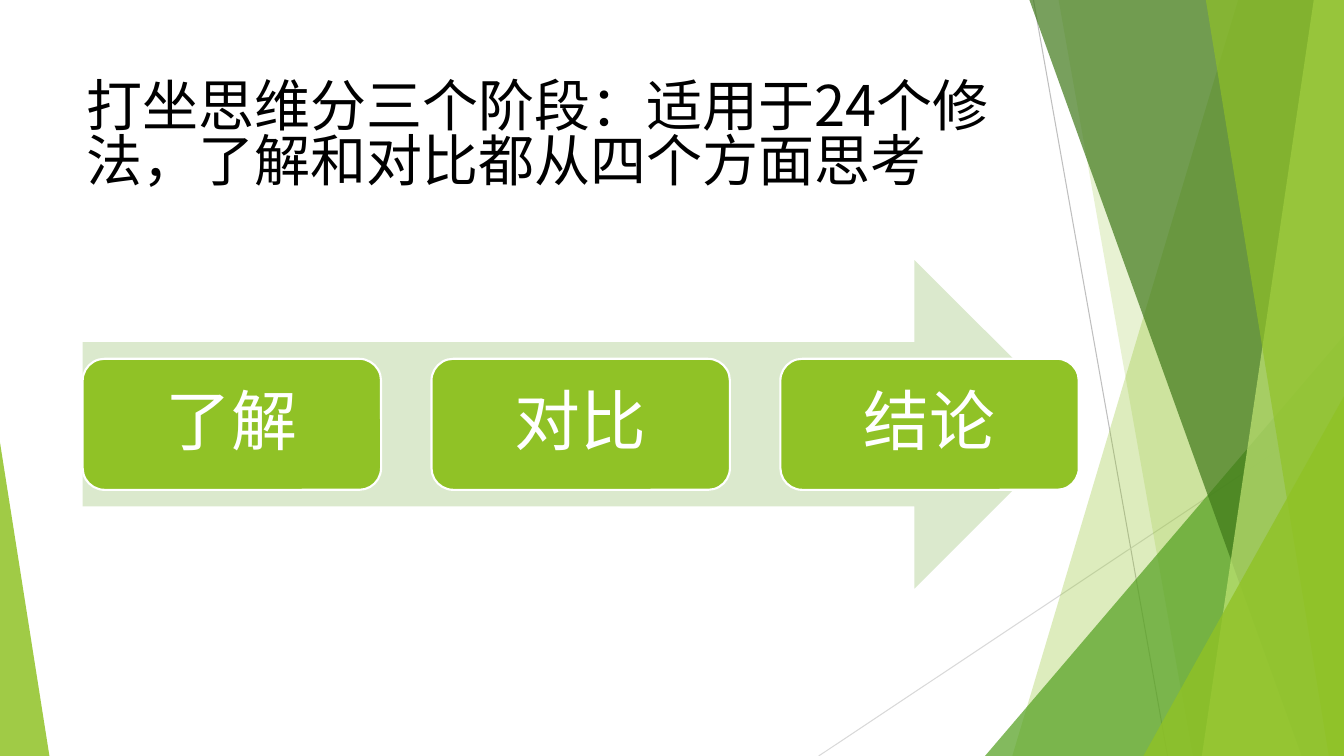
from lxml.etree import SubElement
from pptx import Presentation
from pptx.dml.color import RGBColor
from pptx.enum.shapes import MSO_CONNECTOR, MSO_SHAPE
from pptx.enum.text import MSO_ANCHOR, MSO_AUTO_SIZE, PP_ALIGN
from pptx.oxml.ns import qn
from pptx.util import Inches, Pt

WIDTH, HEIGHT = 13.33, 7.5
BLACK = RGBColor(0x00, 0x00, 0x00)
WHITE = RGBColor(0xFF, 0xFF, 0xFF)
LIME = RGBColor(0x90, 0xC2, 0x26)
PALE_LIME = RGBColor(0xC0, 0xE4, 0x74)
GREEN = RGBColor(0x54, 0xA0, 0x21)
DARK_GREEN = RGBColor(0x3F, 0x78, 0x19)
PALE_GREEN = RGBColor(0xDB, 0xE9, 0xCD)
GRAY = RGBColor(0xBF, 0xBF, 0xBF)
LIGHT_GRAY = RGBColor(0xD9, 0xD9, 0xD9)


def write_text(frame, text, *, font, size, color, spacing, align, anchor, inset=None):
    """Put one formatted paragraph into a text frame."""
    frame.word_wrap = True
    frame.auto_size = MSO_AUTO_SIZE.NONE
    frame.vertical_anchor = anchor
    if inset is not None:
        frame.margin_left = frame.margin_right = Inches(inset)
        frame.margin_top = frame.margin_bottom = Inches(inset)
    paragraph = frame.paragraphs[0]
    paragraph.alignment = align
    paragraph.line_spacing = spacing
    run = paragraph.add_run()
    run.text = text
    run.font.name = font
    run.font.size = Pt(size)
    run.font.color.rgb = color
    SubElement(run.font._element, qn("a:ea"), typeface=font)


class SlideBuilder:
    title_font = "Noto Sans CJK SC"
    step_font = "Roboto"

    def __init__(self, presentation):
        self.slide = presentation.slides.add_slide(presentation.slide_layouts[5])
        self.shapes = self.slide.shapes

    def paint(self, shape, color, opacity=100):
        shape.shadow.inherit = False
        shape.fill.solid()
        shape.fill.fore_color.rgb = color
        shape.line.fill.background()
        if opacity < 100:
            tint = shape.element.spPr.find(qn("a:solidFill")).find(qn("a:srgbClr"))
            SubElement(tint, qn("a:alpha"), val=str(opacity * 1000))
        return shape

    def preset(self, kind, box, color, opacity=100, adjustment=None):
        shape = self.shapes.add_shape(kind, *map(Inches, box))
        if adjustment is not None:
            shape.adjustments[0] = adjustment
        return self.paint(shape, color, opacity)

    def line(self, start, end, color):
        connector = self.shapes.add_connector(
            MSO_CONNECTOR.STRAIGHT, *map(Inches, start + end))
        connector.line.color.rgb = color
        connector.line.width = Pt(0.75)
        SubElement(connector.element.spPr, qn("a:effectLst"))

    def band(self, top_x, bottom_x, color, opacity):
        """A full-height band from a slanted left edge to the slide's right edge."""
        builder = self.shapes.build_freeform(Inches(top_x), 0)
        corners = [(WIDTH, 0), (WIDTH, HEIGHT), (bottom_x, HEIGHT)]
        builder.add_line_segments([(Inches(x), Inches(y)) for x, y in corners])
        self.paint(builder.convert_to_shape(), color, opacity)

    def corner(self, left, top, width, apex, color, opacity):
        """A right triangle standing on the bottom edge."""
        self.preset(MSO_SHAPE.ISOSCELES_TRIANGLE, (left, top, width, HEIGHT - top),
                    color, opacity, apex)

    def title(self, text, box):
        title = self.shapes.title
        title.left, title.top, title.width, title.height = map(Inches, box)
        write_text(title.text_frame, text, font=self.title_font, size=40, color=BLACK,
                   spacing=0.83, align=PP_ALIGN.LEFT, anchor=MSO_ANCHOR.TOP)

    def step(self, text, box):
        shape = self.preset(MSO_SHAPE.ROUNDED_RECTANGLE, box, LIME)
        shape.line.color.rgb = WHITE
        shape.line.width = Pt(1.5)
        write_text(shape.text_frame, text, font=self.step_font, size=47, color=WHITE,
                   spacing=0.9, align=PP_ALIGN.CENTER, anchor=MSO_ANCHOR.MIDDLE, inset=0.2)


def main():
    presentation = Presentation()
    presentation.slide_width = Inches(WIDTH)
    presentation.slide_height = Inches(HEIGHT)
    builder = SlideBuilder(presentation)

    # Faceted decoration, from back to front
    builder.line((10.25, 0), (11.58, HEIGHT), GRAY)
    builder.line((WIDTH, 4.03), (8.12, HEIGHT), LIGHT_GRAY)
    builder.band(12.28, 10.04, LIME, 30)
    builder.band(10.5, 11.83, LIME, 20)
    builder.corner(9.77, 3.33, 3.56, 1, GREEN, 72)
    builder.band(10.21, 12.91, DARK_GREEN, 70)
    builder.band(13.03, 11.92, PALE_LIME, 70)
    builder.band(11.96, 13.18, LIME, 65)
    builder.corner(11.34, 3.93, 1.99, 1, LIME, 80)
    builder.corner(0, 4.39, 0.49, 0, LIME, 85)

    # Title
    builder.title("打坐思维分三个阶段：适用于24个修法，了解和对比都从四个方面思考",
                  (0.76, 0.76, 9.48, 1.81))

    # Three stages along an arrow
    left, pitch = 0.82, 3.46
    builder.preset(MSO_SHAPE.RIGHT_ARROW, (left, 2.58, 9.88, 3.26), PALE_GREEN)
    for index, stage in enumerate(["了解", "对比", "结论"]):
        builder.step(stage, (left + index * pitch, 3.56, 2.96, 1.3))

    presentation.save("out.pptx")


if __name__ == "__main__":
    main()
